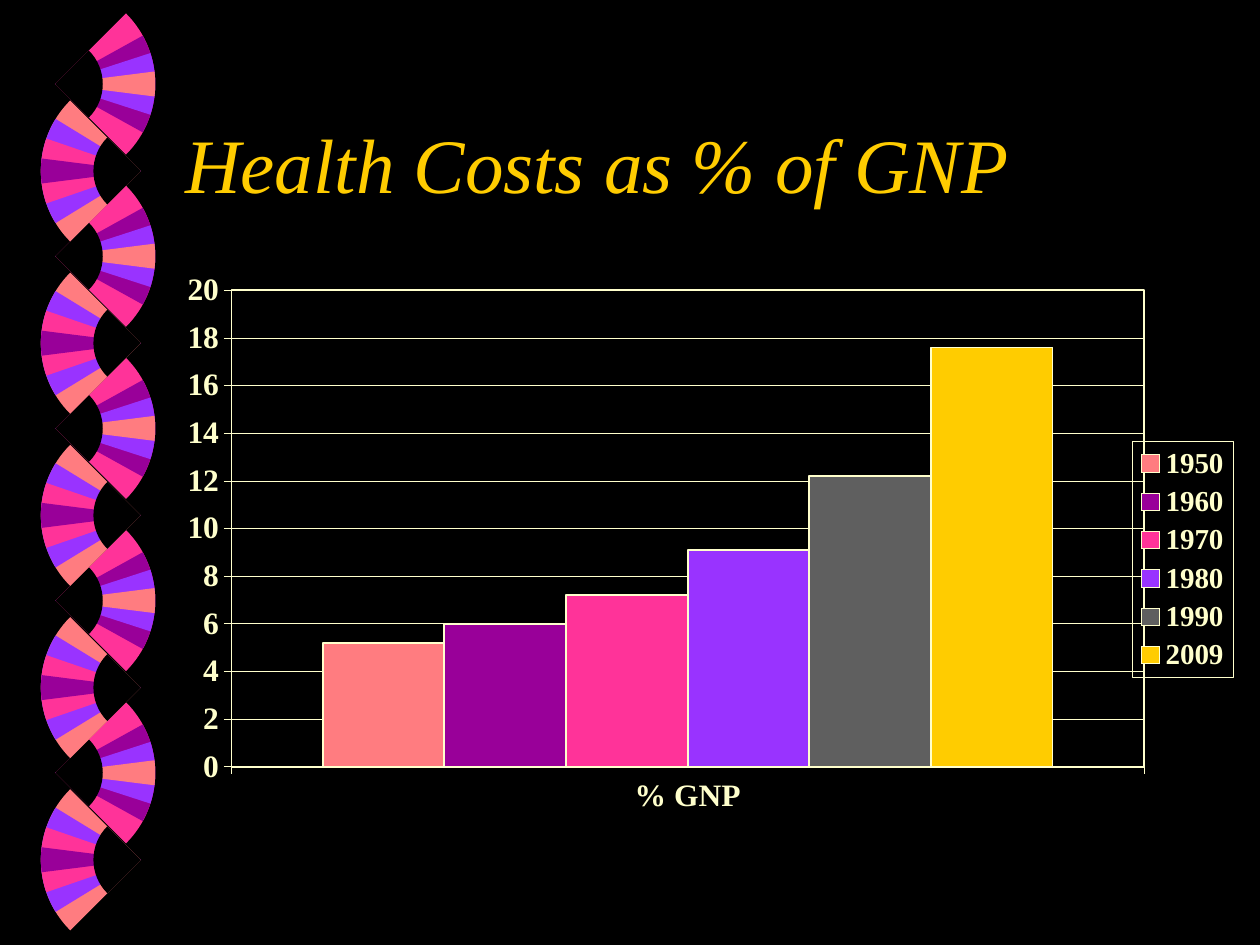
"""Build a slide with a ribbon of fans beside a column chart of health costs."""
from dataclasses import dataclass
from math import cos, radians, sin, tan

from lxml import etree
from pptx import Presentation
from pptx import util as u
from pptx.chart.data import CategoryChartData
from pptx.dml.color import RGBColor
from pptx.enum import chart as ch, text
from pptx.oxml import parse_xml
from pptx.oxml.ns import qn

COLORS = {
    "black": "000000", "cream": "FFFFCC", "gold": "FFCC00", "coral": "FF7C80",
    "plum": "990099", "pink": "FF3399", "violet": "9933FF", "gray": "5F5F5F",
}
FONT = "Times New Roman"
FAN_COUNT = 5
FAN_STEP = 98.4
NS = "http://schemas.openxmlformats.org/drawingml/2006/main"


@dataclass
class Wedge:
    color: str
    half_angle: float
    radius: float = 57


@dataclass
class Fan:
    x: float
    y: float
    side: int
    wedges: list[Wedge]


@dataclass
class Year:
    name: str
    share: float
    color: str


FANS = [
    Fan(31.7, 48, 1, [Wedge("pink", 45), Wedge("plum", 29), Wedge("violet", 18),
                      Wedge("coral", 7.2), Wedge("black", 45, 27)]),
    Fan(80.4, 97.7, -1, [Wedge("coral", 45), Wedge("violet", 31.5), Wedge("pink", 19),
                         Wedge("plum", 7.2), Wedge("black", 45, 27)]),
]
YEARS = [
    Year("1950", 5.2, "coral"), Year("1960", 6, "plum"), Year("1970", 7.2, "pink"),
    Year("1980", 9.1, "violet"), Year("1990", 12.2, "gray"), Year("2009", 17.6, "gold"),
]


def rgb(name: str) -> RGBColor:
    return RGBColor.from_string(COLORS[name])


def paint(fill, name: str) -> None:
    fill.solid()
    fill.fore_color.rgb = rgb(name)


def style_line(line, width: float) -> None:
    line.color.rgb = rgb("cream")
    line.width = u.Pt(width)


def style_font(font, size: float) -> None:
    font.name, font.size, font.bold = FONT, u.Pt(size), True
    font.color.rgb = rgb("cream")


def draw_wedge(s, wedge: Wedge, x: float, y: float, side: int):
    """Draw a curved sector in its upright frame, then turn it to face sideways."""
    half, radius = radians(wedge.half_angle), wedge.radius
    low, high = radians(45) - half, radians(45) + half
    pull = radius * 4 / 3 * tan(half / 2)
    size = radius * cos(low)
    start = radius * cos(low), radius * sin(low)
    end = radius * cos(high), radius * sin(high)
    controls = [(start[0] - pull * sin(low), start[1] + pull * cos(low)),
                (end[0] + pull * sin(high), end[1] - pull * cos(high))]
    builder = s.shapes.build_freeform(0, 0)
    builder.add_line_segments([(u.Pt(side * px), u.Pt(-py)) for px, py in (start, end)])
    sp = builder.convert_to_shape()
    curve = sp._element.findall(".//" + qn("a:lnTo"))[1]
    curve.tag = qn("a:cubicBezTo")
    for i, (px, py) in enumerate(controls):
        pt = etree.Element(qn("a:pt"))
        pt.set("x", str(u.Pt(px if side > 0 else size - px)))
        pt.set("y", str(u.Pt(size - py)))
        curve.insert(i, pt)
    etree.SubElement(curve.getparent(), qn("a:close"))
    center_x = x + side * size * cos(radians(45))
    sp.left, sp.top = u.Pt(center_x - size / 2), u.Pt(y - size / 2)
    sp.rotation = 45 * side % 360
    sp.shadow.inherit = False
    paint(sp.fill, wedge.color)
    sp.line.fill.background()
    return sp


def draw_ribbon(s) -> None:
    """Draw the fans and keep them on the layout, behind the slide content."""
    tree = s.slide_layout.shapes._spTree
    for fan in FANS:
        for i in range(FAN_COUNT):
            for wedge in fan.wedges:
                sp = draw_wedge(s, wedge, fan.x, fan.y + i * FAN_STEP, fan.side)
                sp._element.nvSpPr.cNvPr.set("id", str(len(tree) + 100))
                tree.append(sp._element)


def draw_title(s) -> None:
    title = s.shapes.title
    title.left, title.top, title.width, title.height = map(u.Pt, (98.6, 48.2, 612, 90))
    tf = title.text_frame
    tf.vertical_anchor = text.MSO_ANCHOR.MIDDLE
    p = tf.paragraphs[0]
    p.alignment = text.PP_ALIGN.LEFT
    r = p.add_run()
    r.text = "Health Costs as % of GNP"
    r.font.name, r.font.size, r.font.italic = FONT, u.Pt(44), True
    r.font.color.rgb = rgb("gold")


def outline(width: float):
    return parse_xml(
        f'<c:spPr xmlns:c="http://schemas.openxmlformats.org/drawingml/2006/chart" xmlns:a="{NS}">'
        f'<a:noFill/><a:ln w="{u.Pt(width)}"><a:solidFill><a:srgbClr val="{COLORS["cream"]}"/>'
        '</a:solidFill></a:ln></c:spPr>')


def place_plot(plot_area, x: float, y: float, w: float, h: float) -> None:
    for old in plot_area.findall(qn("c:layout")):
        plot_area.remove(old)
    layout = etree.Element(qn("c:layout"))
    manual = etree.SubElement(layout, qn("c:manualLayout"))
    values = {"layoutTarget": "inner", "xMode": "edge", "yMode": "edge",
              "x": x, "y": y, "w": w, "h": h}
    for tag, value in values.items():
        etree.SubElement(manual, qn(f"c:{tag}")).set("val", str(value))
    plot_area.insert(0, layout)


def draw_chart(s) -> None:
    data = CategoryChartData()
    data.categories = ["% GNP"]
    for year in YEARS:
        data.add_series(year.name, [year.share])
    chart = s.shapes.add_chart(ch.XL_CHART_TYPE.COLUMN_CLUSTERED,
                               *map(u.Pt, (98.6, 156.2, 612, 324)), data).chart
    chart.has_title = False
    style_font(chart.font, 18)
    plot = chart.plots[0]
    plot.gap_width, plot.overlap, plot.vary_by_categories = 150, 0, False
    for series, year in zip(plot.series, YEARS):
        paint(series.format.fill, year.color)
        style_line(series.format.line, 1)
    for axis in (chart.category_axis, chart.value_axis):
        axis.major_tick_mark = ch.XL_TICK_MARK.CROSS
        style_font(axis.tick_labels.font, 18)
        style_line(axis.format.line, 0.25)
    chart.category_axis.tick_label_position = ch.XL_TICK_LABEL_POSITION.LOW
    values = chart.value_axis
    values.minimum_scale, values.maximum_scale, values.major_unit = 0, 20, 2
    style_line(values.major_gridlines.format.line, 0.25)
    chart.has_legend = True
    legend = chart.legend
    legend.position = ch.XL_LEGEND_POSITION.RIGHT
    legend.include_in_layout = False
    style_font(legend.font, 16.6)
    legend._element.find(qn("c:txPr")).addprevious(outline(0.25))
    plot_area = chart._chartSpace.chart.plotArea
    place_plot(plot_area, 0.055, 0.021, 0.852, 0.848)
    plot_area.append(outline(1))


def main() -> None:
    prs = Presentation()
    prs.slide_width, prs.slide_height = u.Pt(720), u.Pt(540)
    s = prs.slides.add_slide(prs.slide_layouts[5])
    paint(s.background.fill, "black")
    draw_ribbon(s)
    draw_title(s)
    draw_chart(s)
    prs.save("out.pptx")


if __name__ == "__main__":
    main()
